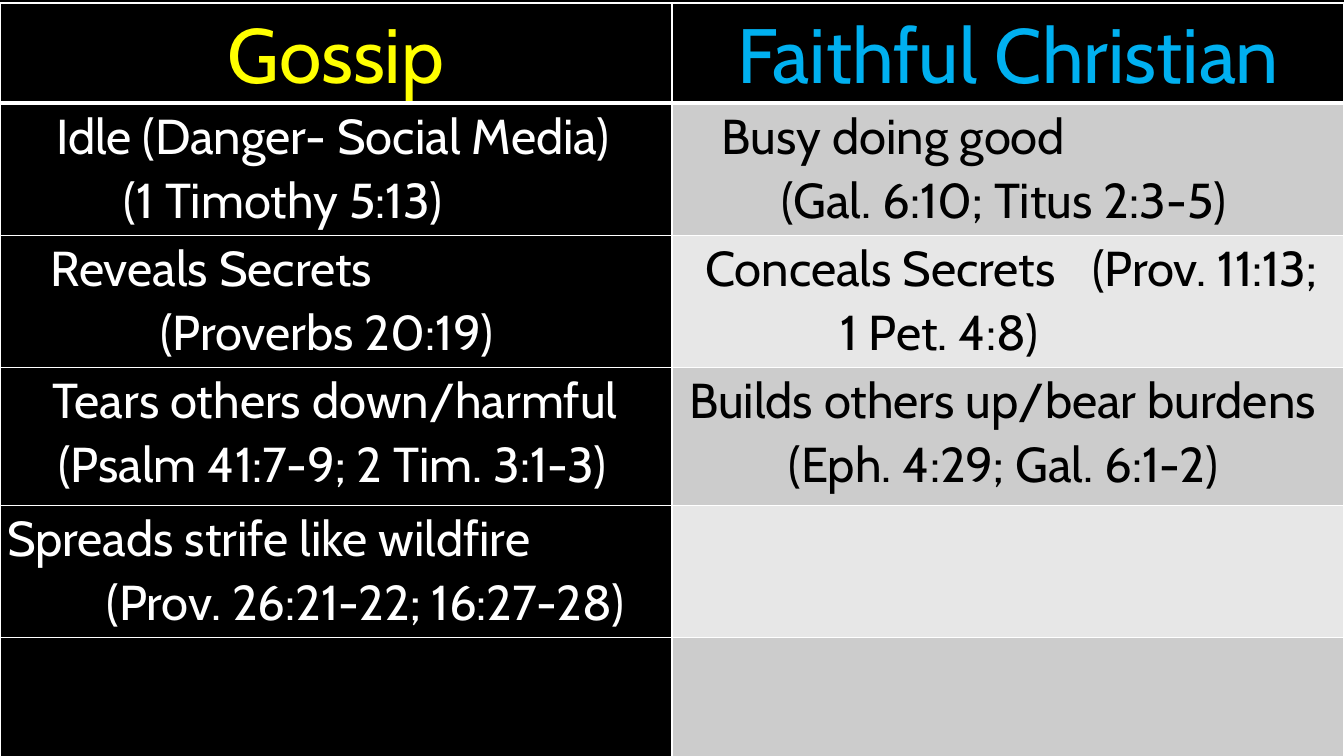
import pptx
import pptx.dml.color
import pptx.enum.text
import pptx.oxml.ns
import pptx.util
from lxml import etree

RGBColor = pptx.dml.color.RGBColor
BLACK = RGBColor(0x00, 0x00, 0x00)
WHITE = RGBColor(0xFF, 0xFF, 0xFF)
YELLOW = RGBColor(0xFF, 0xFF, 0x00)
BLUE = RGBColor(0x00, 0xB0, 0xF0)
BANDS = (RGBColor(0xCC, 0xCC, 0xCC), RGBColor(0xE7, 0xE7, 0xE7))

FONT = "Cabin"
WIDTH, HEIGHT = 13.33, 7.5
ROW_HEIGHTS = (0.96, 1.31, 1.31, 1.37, 1.31, 1.41)
HEADINGS = (("Gossip", YELLOW), ("Faithful Christian", BLUE))
CONTRASTS = (
    (("Idle (Danger- Social Media)\v(1 Timothy 5:13)", 0.49, 1.16),
     ("Busy doing good\v(Gal. 6:10; Titus 2:3-5)", 0.42, 1.02)),
    (("Reveals Secrets\v(Proverbs 20:19)", 0.43, 1.52),
     ("Conceals Secrets\t(Prov. 11:13; 1 Pet. 4:8)", 0.26, 1.6)),
    (("Tears others down/harmful\v(Psalm 41:7-9; 2 Tim. 3:1-3)", 0.45, 0.51),
     ("Builds others up/bear burdens\v(Eph. 4:29; Gal. 6:1-2)", 0.1, 1.09)),
    (("Spreads strife like wildfire\v(Prov. 26:21-22; 16:27-28)", 0, 0.99), None),
    (None, None),
)
REFERENCE_TAB = 5.05


def add_element(parent, tag, **attributes):
    """Append a DrawingML element and return it."""
    return etree.SubElement(parent, pptx.oxml.ns.qn(tag), **attributes)


def style_cell(cell, fill, top=1, bottom=1):
    """Give a cell its margins, white borders and fill."""
    cell.margin_left = cell.margin_right = pptx.util.Inches(0.07)
    cell.margin_top = cell.margin_bottom = 0
    properties = cell._tc.get_or_add_tcPr()
    for side, points in (("L", 1), ("R", 1), ("T", top), ("B", bottom)):
        line = add_element(properties, f"a:ln{side}", w=str(pptx.util.Pt(points)))
        solid = add_element(line, "a:solidFill")
        add_element(solid, "a:srgbClr", val=str(WHITE))
    cell.fill.solid()
    cell.fill.fore_color.rgb = fill


def write_cell(cell, text, size, color):
    """Write one paragraph in a cell and return it."""
    para = cell.text_frame.paragraphs[0]
    para.text = text
    para.line_spacing = 1.07
    for span in para.runs:
        span.font.name = FONT
        span.font.size = pptx.util.Pt(size)
        span.font.bold = False
        span.font.color.rgb = color
    return para


def indent_lines(para, first, second):
    """Indent the first and following lines, with a tab for a reference."""
    para.alignment = pptx.enum.text.PP_ALIGN.LEFT
    properties = para._p.get_or_add_pPr()
    properties.set("marL", str(pptx.util.Inches(second)))
    properties.set("indent", str(pptx.util.Inches(first - second)))
    if "\t" in para.text:
        tabs = add_element(properties, "a:tabLst")
        add_element(tabs, "a:tab", pos=str(pptx.util.Inches(REFERENCE_TAB)), algn="l")


def fill_headings(table):
    """Fill the heading row."""
    for column, (text, color) in enumerate(HEADINGS):
        cell = table.cell(0, column)
        style_cell(cell, BLACK, bottom=3)
        para = write_cell(cell, text, 55, color)
        para.alignment = pptx.enum.text.PP_ALIGN.CENTER


def fill_contrasts(table):
    """Fill the rows that set the two columns against each other."""
    for row, entries in enumerate(CONTRASTS, start=1):
        fills = (BLACK, BANDS[(row - 1) % 2])
        for column, entry in enumerate(entries):
            cell = table.cell(row, column)
            style_cell(cell, fills[column], top=3 if row == 1 else 1)
            if entry:
                text, first, second = entry
                para = write_cell(cell, text, 35, (WHITE, BLACK)[column])
                indent_lines(para, first, second)


def add_comparison(page, left, top, width):
    """Place the two-column comparison table."""
    frame = page.shapes.add_table(
        len(ROW_HEIGHTS), len(HEADINGS), pptx.util.Inches(left), pptx.util.Inches(top),
        pptx.util.Inches(width), pptx.util.Inches(sum(ROW_HEIGHTS)))
    table = frame.table
    for row, height in zip(table.rows, ROW_HEIGHTS):
        row.height = pptx.util.Inches(height)
    fill_headings(table)
    fill_contrasts(table)


def main():
    """Build the deck and save it."""
    deck = pptx.Presentation()
    deck.slide_width = pptx.util.Inches(WIDTH)
    deck.slide_height = pptx.util.Inches(HEIGHT)
    page = deck.slides.add_slide(deck.slide_layouts[6])
    page.background.fill.solid()
    page.background.fill.fore_color.rgb = BLACK
    add_comparison(page, 0, 0.03, WIDTH)
    deck.save("out.pptx")


if __name__ == "__main__":
    main()
